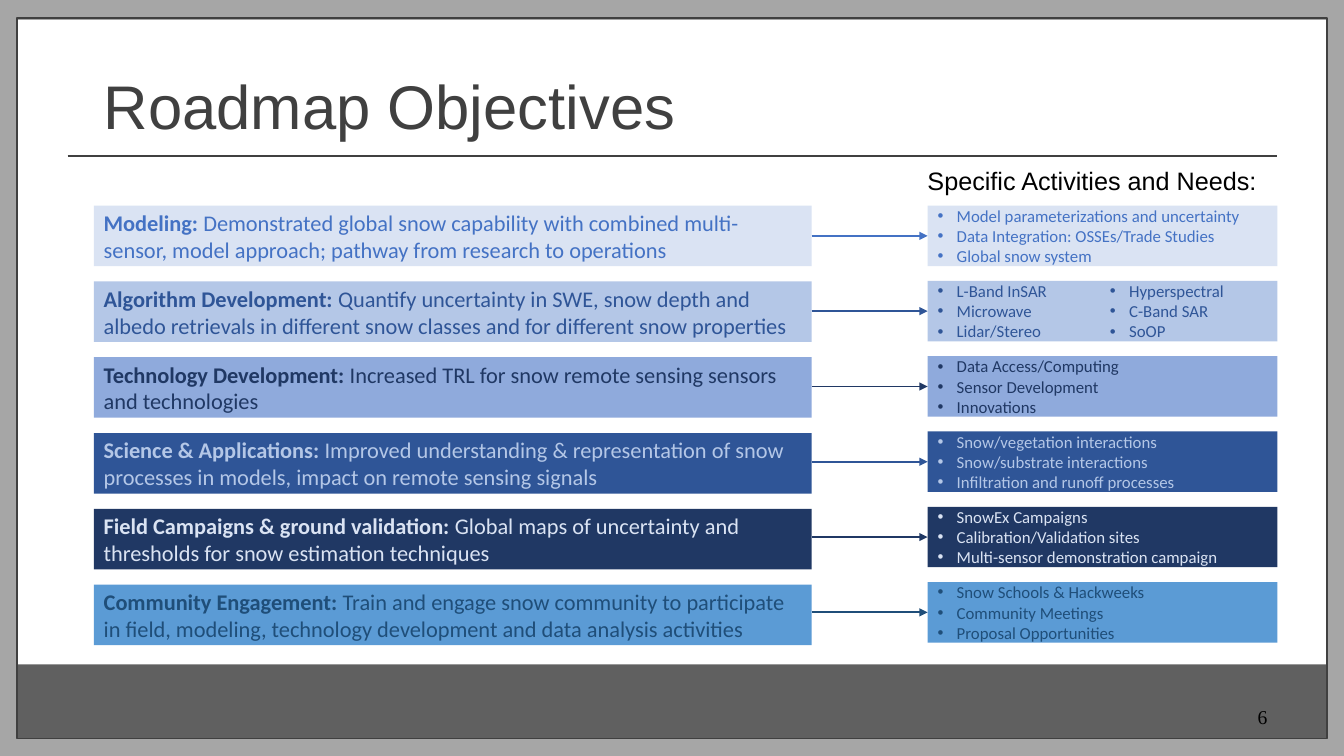
from dataclasses import dataclass

from lxml import etree
from pptx import Presentation
from pptx import util as u
from pptx.dml import color
from pptx.enum import shapes, text
from pptx.oxml import ns

COLOURS = {
    "surround": "A6A6A6", "footer": "606060", "paper": "FFFFFF",
    "outline": "404040", "black": "000000",
    "mist": "DAE3F3", "pale": "B4C7E7", "soft": "8FAADC", "blue": "4472C4",
    "deep": "2F5597", "navy": "203864", "sky": "5B9BD5", "ocean": "1F4E79",
}
OBJECTIVE_LEFT, OBJECTIVE_WIDTH = 6.98, 53.41
NEEDS_LEFT, NEEDS_SPLIT, NEEDS_RIGHT = 69.02, 81.85, 95.05
FIRST_ROW, ROW_HEIGHT = 27.2, 8
OBJECTIVE_PITCH, NEEDS_PITCH = 10.03, 9.96


@dataclass(frozen=True)
class Area:
    left: float
    top: float
    width: float
    height: float


@dataclass(frozen=True)
class Objective:
    name: str
    goal: str
    fill: str
    ink: str
    arrow: str
    needs: tuple[tuple[str, ...], ...]


OBJECTIVES = (
    Objective("Modeling: ",
              "Demonstrated global snow capability with combined multi-sensor, "
              "model approach; pathway from research to operations",
              "mist", "blue", "blue",
              (("Model parameterizations and uncertainty",
                "Data Integration: OSSEs/Trade Studies", "Global snow system"),)),
    Objective("Algorithm Development: ",
              "Quantify uncertainty in SWE, snow depth and albedo retrievals in "
              "different snow classes and for different snow properties",
              "pale", "deep", "deep",
              (("L-Band InSAR", "Microwave", "Lidar/Stereo"),
               ("Hyperspectral", "C-Band SAR", "SoOP"))),
    Objective("Technology Development: ",
              "Increased TRL for snow remote sensing sensors and technologies",
              "soft", "navy", "navy",
              (("Data Access/Computing", "Sensor Development", "Innovations"),)),
    Objective("Science & Applications: ",
              "Improved understanding & representation of snow processes in "
              "models, impact on remote sensing signals",
              "deep", "pale", "deep",
              (("Snow/vegetation interactions", "Snow/substrate interactions",
                "Infiltration and runoff processes"),)),
    Objective("Field Campaigns & ground validation: ",
              "Global maps of uncertainty and thresholds for snow estimation "
              "techniques",
              "navy", "mist", "navy",
              (("SnowEx Campaigns", "Calibration/Validation sites",
                "Multi-sensor demonstration campaign"),)),
    Objective("Community Engagement: ",
              "Train and engage snow community to participate in field, "
              "modeling, technology development and data analysis activities",
              "sky", "ocean", "ocean",
              (("Snow Schools & Hackweeks", "Community Meetings",
                "Proposal Opportunities"),)),
)

deck = Presentation()
deck.slide_width, deck.slide_height = u.Inches(13.33), u.Inches(7.5)
roadmap = deck.slides.add_slide(deck.slide_layouts[6])


def rgb(name: str) -> color.RGBColor:
    return color.RGBColor.from_string(COLOURS[name])


def across(share: float) -> int:
    return round(deck.slide_width * share / 100)


def down(share: float) -> int:
    return round(deck.slide_height * share / 100)


def place(area: Area) -> tuple[int, int, int, int]:
    return across(area.left), down(area.top), across(area.width), down(area.height)


def style(run, size: float, face: str, ink: str, bold: bool = False) -> None:
    run.font.size, run.font.name, run.font.bold = u.Pt(size), face, bold
    run.font.color.rgb = rgb(ink)


def panel(area: Area, fill: str | None, outline: str | None = None):
    block = roadmap.shapes.add_shape(shapes.MSO_SHAPE.RECTANGLE, *place(area))
    block.shadow.inherit = False
    if fill:
        block.fill.solid()
        block.fill.fore_color.rgb = rgb(fill)
    else:
        block.fill.background()
    if outline:
        block.line.color.rgb = rgb(outline)
        block.line.width = u.Pt(1)
    else:
        block.line.fill.background()
    block.text_frame.word_wrap = True
    block.text_frame.vertical_anchor = text.MSO_ANCHOR.MIDDLE
    return block


def label(area: Area, words: str, size: float, face: str, ink: str,
          align=text.PP_ALIGN.LEFT, anchor=text.MSO_ANCHOR.TOP) -> None:
    frame = roadmap.shapes.add_textbox(*place(area)).text_frame
    frame.word_wrap = True
    frame.vertical_anchor = anchor
    frame.text = words
    frame.paragraphs[0].alignment = align
    style(frame.paragraphs[0].runs[0], size, face, ink)


def rule(start: float, end: float, level: float, ink: str, weight: float,
         arrow: bool = False) -> None:
    stroke = roadmap.shapes.add_connector(
        shapes.MSO_CONNECTOR.STRAIGHT,
        across(start), down(level), across(end), down(level))
    stroke.line.color.rgb = rgb(ink)
    stroke.line.width = u.Pt(weight)
    if arrow:
        etree.SubElement(stroke.line._get_or_add_ln(), ns.qn("a:tailEnd"),
                         type="triangle")
    etree.SubElement(stroke._element.spPr, ns.qn("a:effectLst"))


def objective_panel(objective: Objective, top: float) -> None:
    area = Area(OBJECTIVE_LEFT, top, OBJECTIVE_WIDTH, ROW_HEIGHT)
    statement = panel(area, objective.fill).text_frame.paragraphs[0]
    statement.text = objective.name
    statement.alignment = text.PP_ALIGN.LEFT
    statement.add_run().text = objective.goal
    for run, bold in zip(statement.runs, (True, False)):
        style(run, 16, "Calibri", objective.ink, bold)


def needs_panel(needs: tuple[str, ...], area: Area, fill: str, ink: str) -> None:
    frame = panel(area, fill).text_frame
    frame.text = "\n".join(needs)
    for need in frame.paragraphs:
        need.alignment = text.PP_ALIGN.LEFT
        properties = need._p.get_or_add_pPr()
        properties.set("marL", str(u.Inches(0.19)))
        properties.set("indent", str(-u.Inches(0.19)))
        etree.SubElement(properties, ns.qn("a:buFont"), typeface="Arial")
        etree.SubElement(properties, ns.qn("a:buChar"), char="•")
        style(need.runs[0], 12, "Calibri", ink)


def main() -> None:
    roadmap.background.fill.solid()
    roadmap.background.fill.fore_color.rgb = rgb("surround")
    panel(Area(1.28, 87.87, 97.45, 9.87), "footer")
    panel(Area(1.28, 2.67, 97.45, 85.2), "paper")
    panel(Area(1.28, 2.4, 97.45, 95.33), None, "outline")
    rule(5.03, NEEDS_RIGHT, 20.67, "outline", 1.75)
    label(Area(OBJECTIVE_LEFT, 5.6, 89.72, 16.67), "Roadmap Objectives",
          44, "Arial", "outline", anchor=text.MSO_ANCHOR.MIDDLE)
    label(Area(71.72, 92.53, 23.33, 4.93), "6", 14, "Times New Roman", "black",
          align=text.PP_ALIGN.RIGHT)

    for row, objective in enumerate(OBJECTIVES):
        objective_panel(objective, FIRST_ROW + row * OBJECTIVE_PITCH)
        top = FIRST_ROW + row * NEEDS_PITCH
        edges = ((NEEDS_LEFT, NEEDS_RIGHT) if len(objective.needs) == 1
                 else (NEEDS_LEFT, NEEDS_SPLIT, NEEDS_RIGHT))
        for needs, left, right in zip(objective.needs, edges, edges[1:]):
            needs_panel(needs, Area(left, top, right - left, ROW_HEIGHT),
                        objective.fill, objective.ink)
        rule(OBJECTIVE_LEFT + OBJECTIVE_WIDTH, NEEDS_LEFT, top + ROW_HEIGHT / 2,
             objective.arrow, 1.25, arrow=True)

    label(Area(68.27, 21.2, 26.03, 5.33), "Specific Activities and Needs:",
          18, "Arial", "black")
    deck.save("out.pptx")


if __name__ == "__main__":
    main()
